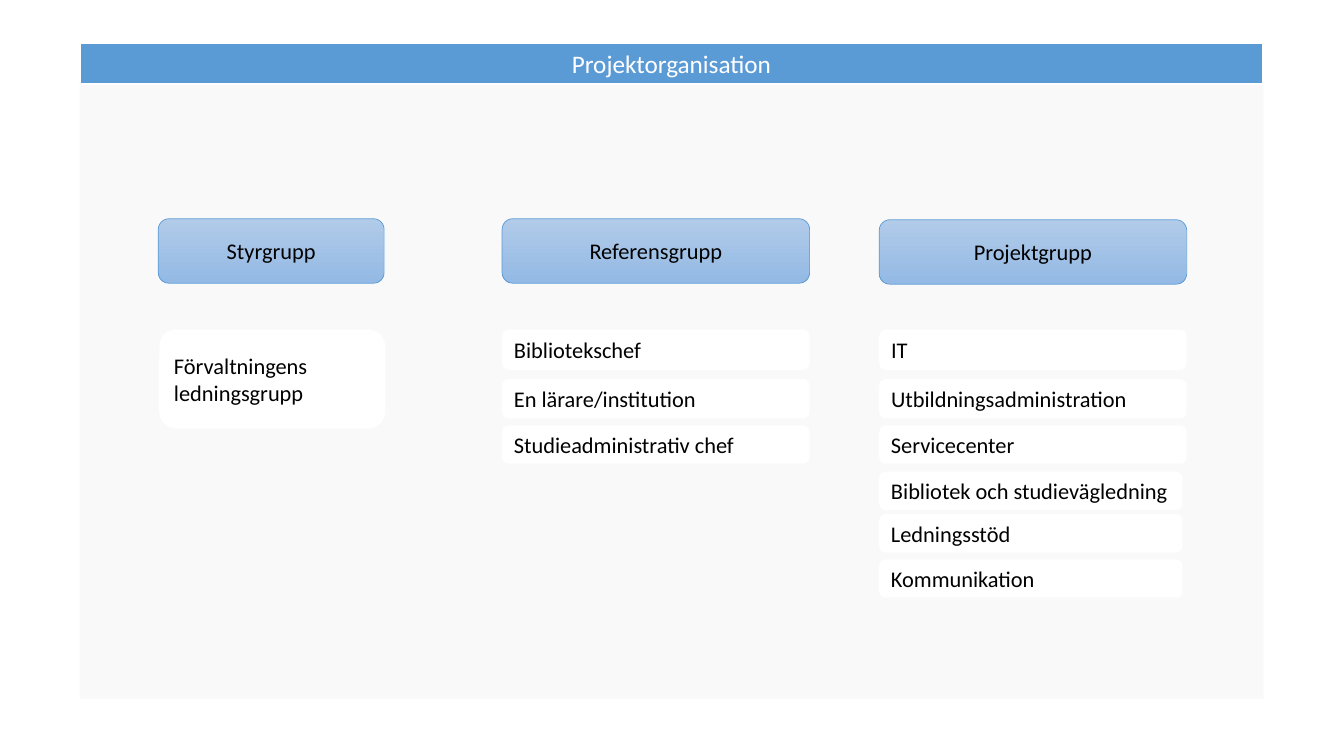
from typing import NamedTuple, Optional

import pptx
import pptx.dml.color
import pptx.enum.shapes
import pptx.enum.text
import pptx.util

Inches = pptx.util.Inches
Pt = pptx.util.Pt
RGBColor = pptx.dml.color.RGBColor
MSO_SHAPE = pptx.enum.shapes.MSO_SHAPE
PP_ALIGN = pptx.enum.text.PP_ALIGN
MSO_ANCHOR = pptx.enum.text.MSO_ANCHOR
MSO_AUTO_SIZE = pptx.enum.text.MSO_AUTO_SIZE

BLACK = RGBColor(0x00, 0x00, 0x00)
WHITE = RGBColor(0xFF, 0xFF, 0xFF)
PANEL_GREY = RGBColor(0xF9, 0xF9, 0xF9)
BLUE = RGBColor(0x5B, 0x9B, 0xD5)
HEAD_TOP = RGBColor(0xB1, 0xCB, 0xE9)
HEAD_BOTTOM = RGBColor(0x93, 0xB9, 0xE4)

BODY_FONT = {"name": "Calibri", "size": Pt(16)}
TITLE_FONT = {"name": "Calibri", "size": Pt(18)}
HEAD_HEIGHT = 0.64


class Row(NamedTuple):
    top: float
    height: float


class Member(NamedTuple):
    text: str
    row: Row
    width: float


class Group(NamedTuple):
    name: str
    left: float
    top: float
    width: float
    members_left: float
    members: list[Member]


ROWS = [Row(3.27, 0.4), Row(3.76, 0.39), Row(4.22, 0.38),
        Row(4.68, 0.38), Row(5.1, 0.38), Row(5.55, 0.38)]
TALL_ROW = Row(3.27, 0.98)


def members(names: list[str], widths: list[float]) -> list[Member]:
    return [Member(*m) for m in zip(names, ROWS, widths)]


GROUPS = [
    Group("Styrgrupp", 1.57, 2.17, 2.24, 1.58,
          [Member("Förvaltningens ledningsgrupp", TALL_ROW, 2.24)]),
    Group("Referensgrupp", 4.98, 2.17, 3.05, 4.98,
          members(["Bibliotekschef", "En lärare/institution",
                   "Studieadministrativ chef"], [3.05] * 3)),
    Group("Projektgrupp", 8.72, 2.18, 3.05, 8.72,
          members(["IT", "Utbildningsadministration", "Servicecenter",
                   "Bibliotek och studievägledning", "Ledningsstöd",
                   "Kommunikation"], [3.05] * 3 + [3.01] * 3)),
]


def add_box(s, kind, left: float, top: float, width: float, height: float,
            fill: Optional[RGBColor] = None, line: Optional[RGBColor] = None,
            line_width: float = 0.5):
    """Add a shape; without a fill colour it gets the heading gradient."""
    sp = s.shapes.add_shape(kind, Inches(left), Inches(top),
                            Inches(width), Inches(height))
    sp.shadow.inherit = False
    if fill is None:
        sp.fill.gradient()
        sp.fill.gradient_angle = 270
        for stop, color in zip(sp.fill.gradient_stops, (HEAD_TOP, HEAD_BOTTOM)):
            stop.color.rgb = color
    else:
        sp.fill.solid()
        sp.fill.fore_color.rgb = fill
    if line is None:
        sp.line.fill.background()
    else:
        sp.line.color.rgb = line
        sp.line.width = Pt(line_width)
    return sp


def set_text(sp, text: str, font: dict, color: RGBColor, align,
             anchor=MSO_ANCHOR.MIDDLE) -> None:
    tf = sp.text_frame
    tf.word_wrap = True
    tf.vertical_anchor = anchor
    p = tf.paragraphs[0]
    p.alignment = align
    r = p.add_run()
    r.text = text
    for key, value in font.items():
        setattr(r.font, key, value)
    r.font.color.rgb = color


def draw_group(s, group: Group) -> None:
    rounded = MSO_SHAPE.FLOWCHART_ALTERNATE_PROCESS
    sp = add_box(s, rounded, group.left, group.top, group.width, HEAD_HEIGHT,
                 line=BLUE)
    set_text(sp, group.name, BODY_FONT, BLACK, PP_ALIGN.CENTER)
    for member in group.members:
        sp = add_box(s, rounded, group.members_left, member.row.top,
                     member.width, member.row.height, WHITE)
        set_text(sp, member.text, BODY_FONT, BLACK, PP_ALIGN.LEFT)


def main() -> None:
    prs = pptx.Presentation()
    prs.slide_width = Inches(13.33)
    prs.slide_height = Inches(7.5)
    s = prs.slides.add_slide(prs.slide_layouts[6])

    add_box(s, MSO_SHAPE.RECTANGLE, 0.79, 0.47, 11.74, 6.46, PANEL_GREY)
    for group in GROUPS:
        draw_group(s, group)
    title = add_box(s, MSO_SHAPE.RECTANGLE, 0.79, 0.43, 11.74, 0.4,
                    BLUE, WHITE, 1.5)
    set_text(title, "Projektorganisation", TITLE_FONT, WHITE,
             PP_ALIGN.CENTER, MSO_ANCHOR.TOP)
    title.text_frame.auto_size = MSO_AUTO_SIZE.SHAPE_TO_FIT_TEXT

    prs.save("out.pptx")


if __name__ == "__main__":
    main()
